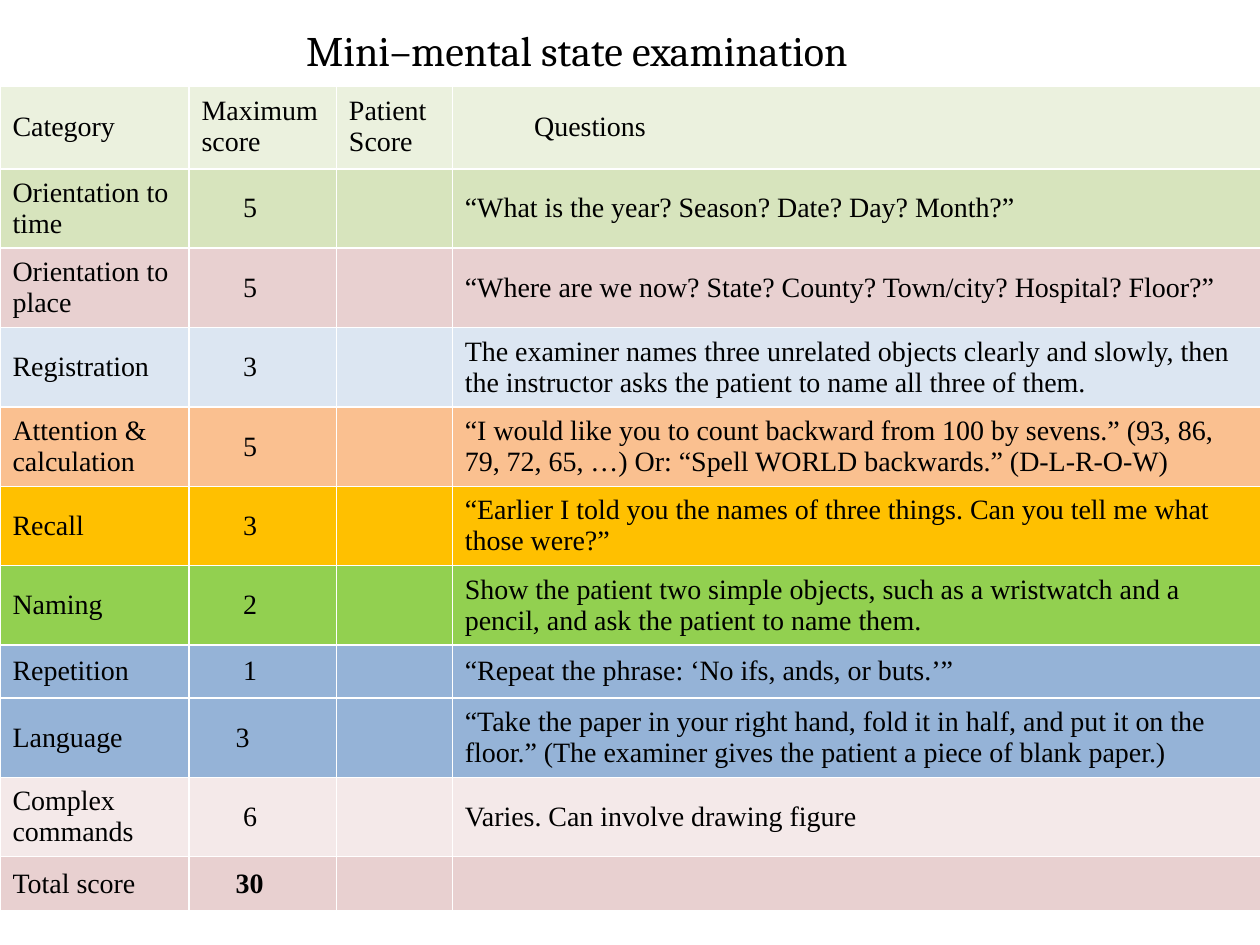
from lxml.etree import SubElement
from pptx import Presentation
from pptx.dml.color import RGBColor
from pptx.enum.text import MSO_ANCHOR
from pptx.oxml.ns import qn
from pptx.util import Inches, Pt

COLORS = {
    "white": "FFFFFF", "black": "000000", "header": "EBF1DE", "sage": "D7E4BD",
    "rose": "E8D0D0", "ice": "DCE6F2", "peach": "FAC090", "gold": "FFC000",
    "green": "92D050", "blue": "95B3D7", "blush": "F4E9E9",
}

TITLE = "Mini–mental state examination"
HEADERS = ("Category", "Maximum score", "Patient Score", "Questions")
# Category, maximum score, question, fill, row height
ITEMS = [
    ("Orientation to time", "5", "“What is the year? Season? Date? Day? Month?”", "sage", 0.63),
    ("Orientation to place", "5",
     "“Where are we now? State? County? Town/city? Hospital? Floor?”", "rose", 0.63),
    ("Registration", "3",
     "The examiner names three unrelated objects clearly and slowly, then the instructor "
     "asks the patient to name all three of them.", "ice", 0.63),
    ("Attention & calculation", "5",
     "“I would like you to count backward from 100 by sevens.” (93, 86, 79, 72, 65, …) "
     "Or: “Spell WORLD backwards.” (D-L-R-O-W)", "peach", 0.63),
    ("Recall", "3",
     "“Earlier I told you the names of three things. Can you tell me what those were?”",
     "gold", 0.63),
    ("Naming", "2",
     "Show the patient two simple objects, such as a wristwatch and a pencil, and ask "
     "the patient to name them.", "green", 0.63),
    ("Repetition", "1", "“Repeat the phrase: ‘No ifs, ands, or buts.’”", "blue", 0.42),
    ("Language", "3",
     "“Take the paper in your right hand, fold it in half, and put it on the floor.” "
     "(The examiner gives the patient a piece of blank paper.)", "blue", 0.63),
    ("Complex commands", "6", "Varies. Can involve drawing figure", "blush", 0.63),
    ("Total score", "30", "", "rose", 0.43),
]
COLUMN_WIDTHS = (1.5, 1.17, 0.92, 6.42)
ROW_HEIGHTS = [0.5, 0.67] + [item[-1] for item in ITEMS]
CELL_INDENT, SCORE_INDENT, WIDE_SCORE_INDENT = 0.1, 0.43, 0.37
TITLE_INDENT, QUESTIONS_INDENT = 2.43, 0.65


def set_borders(cell, bottom=1):
    properties = cell._tc.get_or_add_tcPr()
    for side, width in (("L", 1), ("R", 1), ("T", 1), ("B", bottom)):
        line = SubElement(properties, qn(f"a:ln{side}"), w=str(Pt(width)))
        SubElement(SubElement(line, qn("a:solidFill")), qn("a:srgbClr"), val=COLORS["white"])


def format_cell(cell, text, fill, indent=CELL_INDENT, font="Times New Roman",
                size=16, bold=False, bottom=1):
    set_borders(cell, bottom)
    cell.fill.solid()
    cell.fill.fore_color.rgb = RGBColor.from_string(COLORS[fill])
    cell.vertical_anchor = MSO_ANCHOR.MIDDLE
    cell.margin_left = Inches(indent)
    cell.text_frame.text = text
    for span in cell.text_frame.paragraphs[0].runs:
        span.font.name = font
        span.font.size = Pt(size)
        span.font.bold = bold
        span.font.color.rgb = RGBColor.from_string(COLORS["black"])


def main():
    deck = Presentation()
    deck.slide_width, deck.slide_height = Inches(10), Inches(7.5)
    page = deck.slides.add_slide(deck.slide_layouts[6])

    # Table grid
    table = page.shapes.add_table(
        len(ROW_HEIGHTS), len(COLUMN_WIDTHS), 0, Inches(0.17),
        Inches(sum(COLUMN_WIDTHS)), Inches(sum(ROW_HEIGHTS))).table
    table.first_row = table.horz_banding = False
    for column, width in zip(table.columns, COLUMN_WIDTHS):
        column.width = Inches(width)
    for row, height in zip(table.rows, ROW_HEIGHTS):
        row.height = Inches(height)

    # Title row across all columns
    table.cell(0, 0).merge(table.cell(0, len(COLUMN_WIDTHS) - 1))
    format_cell(table.cell(0, 0), TITLE, "white", TITLE_INDENT, "Cambria", 24, bottom=3)

    # Column headings
    for column, heading in enumerate(HEADERS):
        indent = QUESTIONS_INDENT if heading == "Questions" else CELL_INDENT
        format_cell(table.cell(1, column), heading, "header", indent)

    # Examination items, with the patient's score left open
    for row, (category, score, question, fill, _) in enumerate(ITEMS, start=2):
        for column, text in enumerate((category, score, "", question)):
            indent = CELL_INDENT
            if column == 1:
                wide = category in ("Language", "Total score")
                indent = WIDE_SCORE_INDENT if wide else SCORE_INDENT
            format_cell(table.cell(row, column), text, fill, indent,
                        bold=column == 1 and category == "Total score")

    deck.save("out.pptx")


if __name__ == "__main__":
    main()
